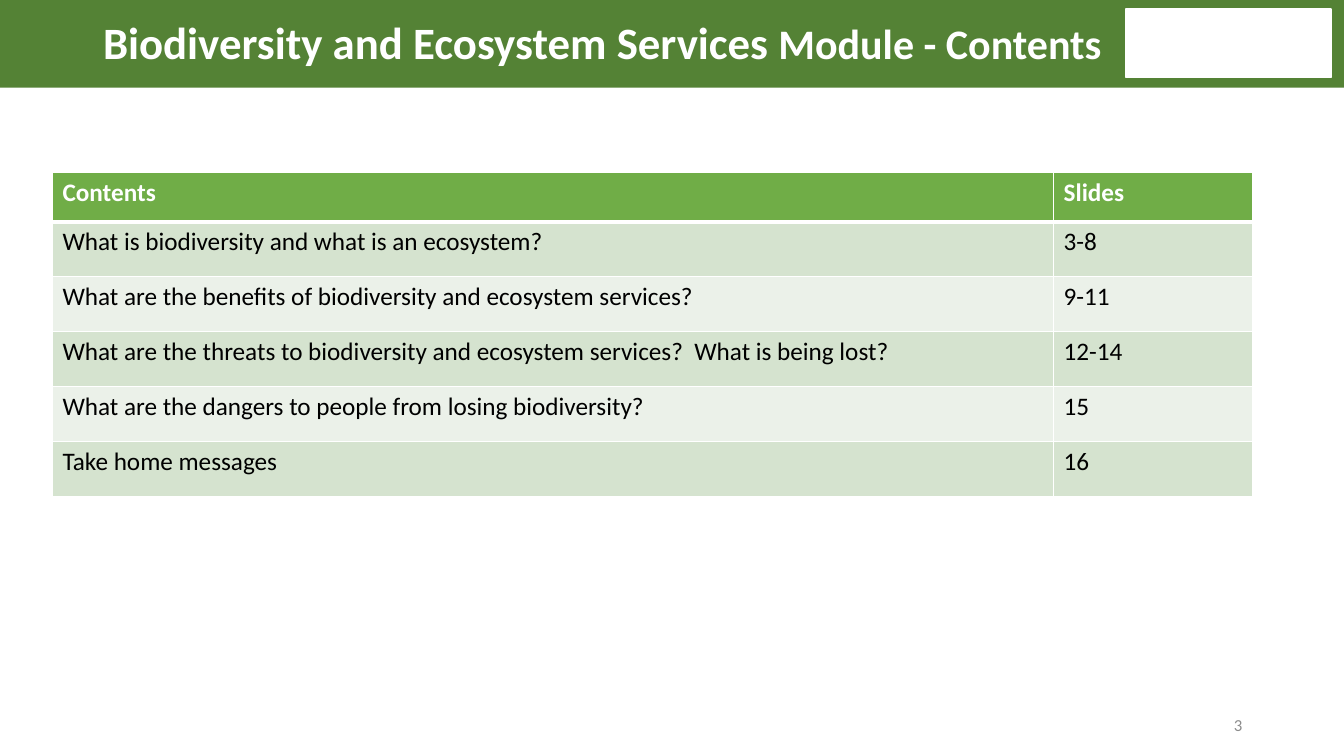
from lxml import etree
from pptx import Presentation
from pptx import util as u
from pptx.dml.color import RGBColor
from pptx.enum import shapes, text
from pptx.oxml.ns import qn

COLORS = {
    "band": "548235",
    "header": "70AD47",
    "row_dark": "D5E3CF",
    "row_light": "EBF1E9",
    "white": "FFFFFF",
    "black": "000000",
    "page": "8C8C8C",
}

CONTENTS = [
    ("Contents", "Slides"),
    ("What is biodiversity and what is an ecosystem?", "3-8"),
    ("What are the benefits of biodiversity and ecosystem services?", "9-11"),
    ("What are the threats to biodiversity and ecosystem services?  What is being lost?", "12-14"),
    ("What are the dangers to people from losing biodiversity?", "15"),
    ("Take home messages", "16"),
]
COLUMN_WIDTHS = (9.93, 1.97)
TABLE_HEIGHT, HEADER_HEIGHT = 3.22, 0.49


def color(name):
    return RGBColor.from_string(COLORS[name])


def place(shape, left, top, width, height):
    bounds = dict(left=left, top=top, width=width, height=height)
    for side, inches in bounds.items():
        setattr(shape, side, u.Inches(inches))


class ContentsSlide:
    font = "Calibri"

    def __init__(self, deck):
        self.slide = deck.slides.add_slide(deck.slide_layouts[5])
        self.shapes = self.slide.shapes

    def add_words(self, paragraph, words, size, ink, bold=False):
        run = paragraph.add_run()
        run.text = words
        style = dict(name=self.font, size=u.Pt(size), bold=bold)
        for key, value in style.items():
            setattr(run.font, key, value)
        run.font.color.rgb = color(ink)

    def rectangle(self, bounds, fill, line=None):
        box = self.shapes.add_shape(shapes.MSO_SHAPE.RECTANGLE, *map(u.Inches, bounds))
        box.shadow.inherit = False
        box.fill.solid()
        box.fill.fore_color.rgb = color(fill)
        if line:
            box.line.color.rgb = color(line)
            box.line.width = u.Pt(1)
        else:
            box.line.fill.background()

    def title(self, bounds, parts):
        heading = self.shapes.title
        place(heading, *bounds)
        # The placeholder comes first in the tree, so lift it above the band.
        self.shapes._spTree.append(heading._element)
        frame = heading.text_frame
        frame_style = dict(word_wrap=True, auto_size=text.MSO_AUTO_SIZE.NONE,
                           vertical_anchor=text.MSO_ANCHOR.MIDDLE)
        for key, value in frame_style.items():
            setattr(frame, key, value)
        line = frame.paragraphs[0]
        line.alignment = text.PP_ALIGN.CENTER
        line.line_spacing = 0.9
        for words, size in parts:
            self.add_words(line, words, size, "white", bold=True)

    def page_number(self, bounds, number):
        frame = self.shapes.add_textbox(*map(u.Inches, bounds)).text_frame
        frame.word_wrap = True
        frame.vertical_anchor = text.MSO_ANCHOR.MIDDLE
        line = frame.paragraphs[0]
        line.alignment = text.PP_ALIGN.RIGHT
        self.add_words(line, number, 12, "page")

    def borders(self, cell, **widths):
        properties = cell._tc.get_or_add_tcPr()
        for side in "LRTB":
            edge = etree.SubElement(properties, qn(f"a:ln{side}"),
                                    w=str(u.Pt(widths.get(side, 1))))
            fill = etree.SubElement(edge, qn("a:solidFill"))
            etree.SubElement(fill, qn("a:srgbClr"), val=COLORS["white"])

    def table(self, left, top, rows):
        bounds = (left, top, sum(COLUMN_WIDTHS), TABLE_HEIGHT)
        grid = self.shapes.add_table(len(rows), len(COLUMN_WIDTHS),
                                     *map(u.Inches, bounds)).table
        for column, width in zip(grid.columns, COLUMN_WIDTHS):
            column.width = u.Inches(width)
        body_height = (TABLE_HEIGHT - HEADER_HEIGHT) / (len(rows) - 1)
        for r, entries in enumerate(rows):
            is_header = r == 0
            grid.rows[r].height = u.Inches(HEADER_HEIGHT if is_header else body_height)
            if is_header:
                fill, ink, edges = "header", "white", {"B": 3}
            else:
                fill = "row_dark" if r % 2 else "row_light"
                ink, edges = "black", {"T": 3 if r == 1 else 1}
            for c, words in enumerate(entries):
                cell = grid.cell(r, c)
                self.borders(cell, **edges)
                cell.fill.solid()
                cell.fill.fore_color.rgb = color(fill)
                self.add_words(cell.text_frame.paragraphs[0], words, 18, ink, bold=is_header)


def main():
    deck = Presentation()
    deck.slide_width, deck.slide_height = u.Inches(13.33), u.Inches(7.5)
    page = ContentsSlide(deck)
    page.page_number((11.54, 7.04, 0.88, 0.31), "3")
    page.rectangle((0, -0.03, 13.33, 0.9), "band")
    page.rectangle((11.17, 0.09, 2.03, 0.68), "white", line="white")
    page.title((0.8, 0, 10.35, 0.9), [("Biodiversity and Ecosystem Services", 32),
                                      (" Module - Contents", 30)])
    page.table(0.52, 1.71, CONTENTS)
    deck.save("out.pptx")


if __name__ == "__main__":
    main()
